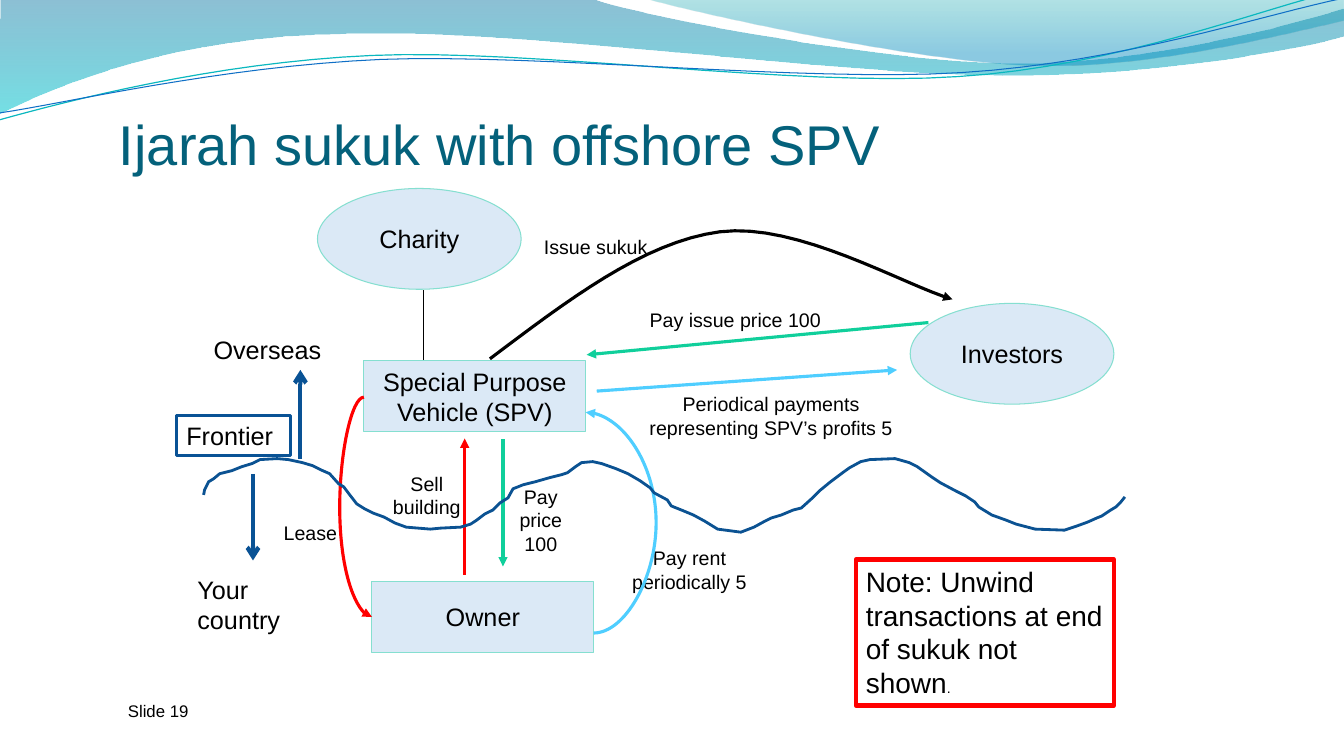
from pptx import Presentation
from pptx.dml.color import RGBColor
from pptx.enum.shapes import MSO_CONNECTOR, MSO_SHAPE
from pptx.enum.text import MSO_ANCHOR, PP_ALIGN
from pptx.oxml.ns import qn
from pptx.util import Inches, Pt
from lxml.etree import SubElement

COLS, ROWS = 133.33, 75
BLACK, RED, GREEN, SKY = "000000", "FF0000", "10CF9B", "4FCEFF"
NAVY, MINT, BLUE, TITLE = "095295", "85DFD0", "0F6FC6", "04617B"


def rgb(code):
    return RGBColor.from_string(code)


def bend(a, b, c, d, steps=16):
    for i in range(1, steps + 1):
        t = i / steps
        u = 1 - t
        yield tuple(u**3 * p + 3 * u * u * t * q + 3 * u * t * t * r + t**3 * s
                    for p, q, r, s in zip(a, b, c, d))


def trace(steps):
    dots = [steps[0]]
    for step in steps[1:]:
        if len(step) == 2:
            dots.append(step)
        else:
            dots += bend(dots[-1], step[:2], step[2:4], step[4:])
    return dots


class Board:
    font = "Arial"

    def __init__(self):
        self.deck = Presentation()
        self.deck.slide_width = Inches(13.33)
        self.deck.slide_height = Inches(7.5)
        self.slide = self.deck.slides.add_slide(self.deck.slide_layouts[6])
        self.shapes = self.slide.shapes

    def x(self, col):
        return round(self.deck.slide_width * col / COLS)

    def y(self, row):
        return round(self.deck.slide_height * row / ROWS)

    def frame(self, left, top, wide, high):
        return self.x(left), self.y(top), self.x(wide), self.y(high)

    def stroke(self, shape, color, width, head=None):
        shape.line.color.rgb = rgb(color)
        shape.line.width = Pt(width)
        if head:
            edge = shape.element.spPr.find(qn("a:ln"))
            SubElement(edge, qn("a:tailEnd"), type=head)

    def fade(self, shape, *shares):
        for color, share in zip(shape.element.spPr.iter(qn("a:srgbClr")), shares):
            SubElement(color, qn("a:alpha"), val=str(share * 1000))

    def style(self, run, size, color=BLACK):
        run.font.name = self.font
        run.font.size = Pt(size)
        run.font.color.rgb = rgb(color)

    def fill_text(self, shape, words, size, color=BLACK, align=PP_ALIGN.LEFT):
        frame = shape.text_frame
        frame.text = words
        for para in frame.paragraphs:
            para.alignment = align
            for run in para.runs:
                self.style(run, size, color)
        return frame

    def label(self, words, spot, size=14, color=BLACK, align=PP_ALIGN.CENTER, edge=None):
        box = self.shapes.add_textbox(*self.frame(*spot))
        frame = self.fill_text(box, words, size, color, align)
        frame.word_wrap = True
        if edge:
            self.stroke(box, *edge)
        return frame

    def title(self, words, spot):
        frame = self.label(words, spot, 40, TITLE, PP_ALIGN.LEFT)
        frame.vertical_anchor = MSO_ANCHOR.BOTTOM
        frame.margin_left = frame.margin_right = frame.margin_bottom = 0

    def node(self, kind, words, spot):
        shape = self.shapes.add_shape(kind, *self.frame(*spot))
        shape.shadow.inherit = False
        shape.fill.solid()
        shape.fill.fore_color.rgb = rgb(BLUE)
        self.fade(shape, 15)
        self.stroke(shape, MINT, 0.75)
        frame = self.fill_text(shape, words, 18, align=PP_ALIGN.CENTER)
        frame.word_wrap = False
        frame.vertical_anchor = MSO_ANCHOR.MIDDLE
        frame.margin_top = frame.margin_bottom = 0
        frame.margin_left = frame.margin_right = Inches(0.07)

    def link(self, start, end, color, width=2.25, head="triangle", bulge=None):
        kind = MSO_CONNECTOR.STRAIGHT if bulge is None else MSO_CONNECTOR.CURVE
        line = self.shapes.add_connector(
            kind, self.x(start[0]), self.y(start[1]), self.x(end[0]), self.y(end[1]))
        self.stroke(line, color, width, head)
        SubElement(line.element.spPr, qn("a:effectLst"))
        if bulge is not None:
            share = round((bulge - start[0]) / (end[0] - start[0]) * 100000)
            guides = line.element.spPr.find(qn("a:prstGeom")).get_or_add_avLst()
            SubElement(guides, qn("a:gd"), name="adj1", fmla=f"val {share}")

    def outline(self, steps, closed=False):
        dots = [(self.x(col), self.y(row)) for col, row in trace(steps)]
        pen = self.shapes.build_freeform(*dots[0], scale=1.0)
        pen.add_line_segments(dots[1:], close=closed)
        shape = pen.convert_to_shape()
        shape.shadow.inherit = False
        return shape

    def curve(self, steps, color, width, head=None):
        shape = self.outline(steps)
        shape.fill.background()
        self.stroke(shape, color, width, head)

    def band(self, steps, stops):
        shape = self.outline(steps, True)
        shape.line.fill.background()
        shape.fill.gradient()
        shape.fill.gradient_angle = 270
        for stop, (place, color, _) in zip(shape.fill.gradient_stops, stops):
            stop.position = place
            stop.color.rgb = rgb(color)
        self.fade(shape, *(share for _, _, share in stops))


def main():
    board = Board()
    board.band([(0, 0), (58.7, -0.1), (63.4, 1.7, 88.5, 6.3, 101.1, 6.3),
                (113.8, 6.3, 127.8, 2.6, 133.3, 0.9), (133.5, 3.6),
                (131.1, 4.4, 116, 7.6, 99.4, 7.5), (82.9, 7.5, 50.9, 2.8, 34.3, 3.4),
                (17.2, 3.6, 6.1, 8.3, -0.1, 11.3)],
               [(0, "0074A1", 45), (1, "00C6CF", 55)])
    board.band([(63.9, -0.1), (67.9, 1.1, 90.9, 6.2, 102.5, 6.5),
                (114.1, 6.9, 128.2, 3.2, 133.3, 2.1), (133.3, 0)],
               [(0, "00A1A9", 30), (0.8, "008BBF", 45)])
    board.curve([(-0.1, 11.9), (6.4, 10.1, 21.1, 6.2, 36.9, 5.5),
                 (52.7, 4.8, 79, 8.7, 95, 7.6), (111, 6.6, 125.2, 0.8, 133.1, -1)],
                "0AB8BF", 0.85)
    board.curve([(0, 11.2), (6.3, 10.3, 21.8, 6.6, 37.8, 5.9),
                 (53.7, 5.3, 79.6, 8.2, 95.5, 7.2), (111.5, 6.2, 125.5, 1.4, 133.4, -0.2)],
                BLUE, 0.75)
    board.title("Ijarah sukuk with offshore SPV", (11.8, 11.7, 77.8, 5.8))

    board.link((46.1, 57), (46.1, 43.5), RED)
    board.link((49.9, 43.6), (49.9, 56.2), GREEN)
    board.curve([(48.6, 35.6), (56.2, 29.9, 63.8, 24, 71.4, 23),
                 (79.1, 22, 89.7, 28.3, 94.5, 29.7)], BLACK, 2.25, "triangle")
    for words, spot in [
        ("Sell building", (37.4, 46.3, 9.9, 5.7)),
        ("Pay price 100", (49.6, 47.6, 8.1, 8.1)),
        ("Pay rent periodically 5", (59.2, 53.7, 18.4, 5.7)),
        ("Pay issue price 100", (59.2, 30.1, 27.5, 3.3)),
        ("Issue sukuk", (50.7, 22.8, 16.8, 3.4)),
        ("Periodical payments representing SPV’s profits 5", (61.9, 38.4, 29.2, 5.7)),
        ("Lease", (26.5, 51.2, 8.6, 3.3)),
    ]:
        board.label(words, spot)

    for kind, words, spot in [
        (MSO_SHAPE.RECTANGLE, "Special Purpose\nVehicle (SPV)", (36.1, 35.8, 22, 7)),
        (MSO_SHAPE.RECTANGLE, "Owner", (36.9, 57.7, 22, 7)),
        (MSO_SHAPE.OVAL, "Investors", (90.3, 30.1, 20.2, 10)),
        (MSO_SHAPE.OVAL, "Charity", (31.5, 18.7, 20.2, 10)),
    ]:
        board.node(kind, words, spot)

    board.link((59.2, 38.8), (89, 36.7), SKY)
    board.link((92.1, 32), (58.2, 35.2), GREEN)
    board.link((58.9, 62.8), (58.1, 40.9), SKY, bulge=65.1)
    board.link((42, 28.8), (42, 35.7), BLACK, 0.75, None)
    board.link((36.1, 39.4), (36.9, 61.2), RED, bulge=33.7)
    board.link((25.1, 47), (25.1, 55.6), NAVY, 3, "arrow")
    board.link((29.8, 45.5), (29.8, 36.7), NAVY, 3, "arrow")

    left = PP_ALIGN.LEFT
    note = board.label("Note: Unwind transactions at end of sukuk not shown",
                       (84.9, 55.5, 25.6, 14.5), 20, align=left, edge=(RED, 3))
    stop = note.paragraphs[0].add_run()
    stop.text = "."
    board.style(stop, 10)
    board.label("Your country", (18.6, 56.5, 13.1, 7.1), 18, align=left)
    board.label("Overseas", (20.2, 32.7, 13.1, 4), 18, align=left)
    board.curve([
        (20.2, 49.1), (20.3, 48.6), (20.7, 47.8), (21.2, 47.5), (21.8, 47), (23, 46.7),
        (24, 46.3), (25, 46), (25.8, 45.6), (27.5, 45.5), (28.6, 45.6), (30, 45.9),
        (31, 46.2), (31.8, 46.6), (32.7, 47), (33.6, 48), (34.1, 48.3), (34.7, 49.1),
        (35.4, 50), (36.2, 50.5), (37, 50.9), (38.1, 51.3), (39.2, 51.9), (40.3, 52.3),
        (42.7, 52.5), (43.7, 52.4), (45.7, 52.3), (46.7, 52), (47.3, 51.6), (48.1, 51),
        (48.9, 50.6), (49.6, 49.9), (50.4, 49.4), (50.9, 48.5), (51.9, 48.1),
        (53.1, 47.8), (54.5, 47.4), (55.7, 47.1), (56.3, 46.9), (57.1, 46.3),
        (57.7, 45.9), (58.8, 45.8), (59.7, 46), (61.1, 46.5), (62.3, 47), (63.5, 47.7),
        (64.5, 48.4), (64.9, 48.9), (66.2, 49.6), (66.6, 50.2), (67.6, 50.6),
        (68.8, 51.1), (69.9, 51.7), (71.2, 52.5), (73.5, 52.8), (74.8, 52.3),
        (75.9, 51.7), (76.5, 51.4), (77.5, 51.1), (78.7, 50.6), (79.5, 50.4),
        (80.5, 49.5), (81.3, 48.7), (82.4, 47.8), (83.6, 46.9), (84.3, 46.4),
        (85.4, 45.8), (86.3, 45.6), (88.8, 45.5), (90.2, 45.9), (91, 46.3),
        (92.4, 47.3), (93.3, 47.9), (94.8, 48.7), (95.8, 49.2), (96.7, 49.8),
        (97.1, 50.3), (98.4, 51.1), (99.8, 51.6), (100.8, 52), (102.7, 52.5),
        (105.6, 52.6), (106.8, 52.2), (107.9, 51.8), (108.8, 51.4), (109.3, 51.2),
        (110.2, 50.6), (110.7, 50.3), (111.2, 49.8), (111.6, 49.3)], "0B5292", 2)
    board.label("Frontier", (17.5, 41.2, 11.3, 4), 18, align=left, edge=(NAVY, 2))
    board.label("Slide 19", (11.7, 69, 23.3, 4), 12, align=left)
    board.deck.save("out.pptx")


if __name__ == "__main__":
    main()
